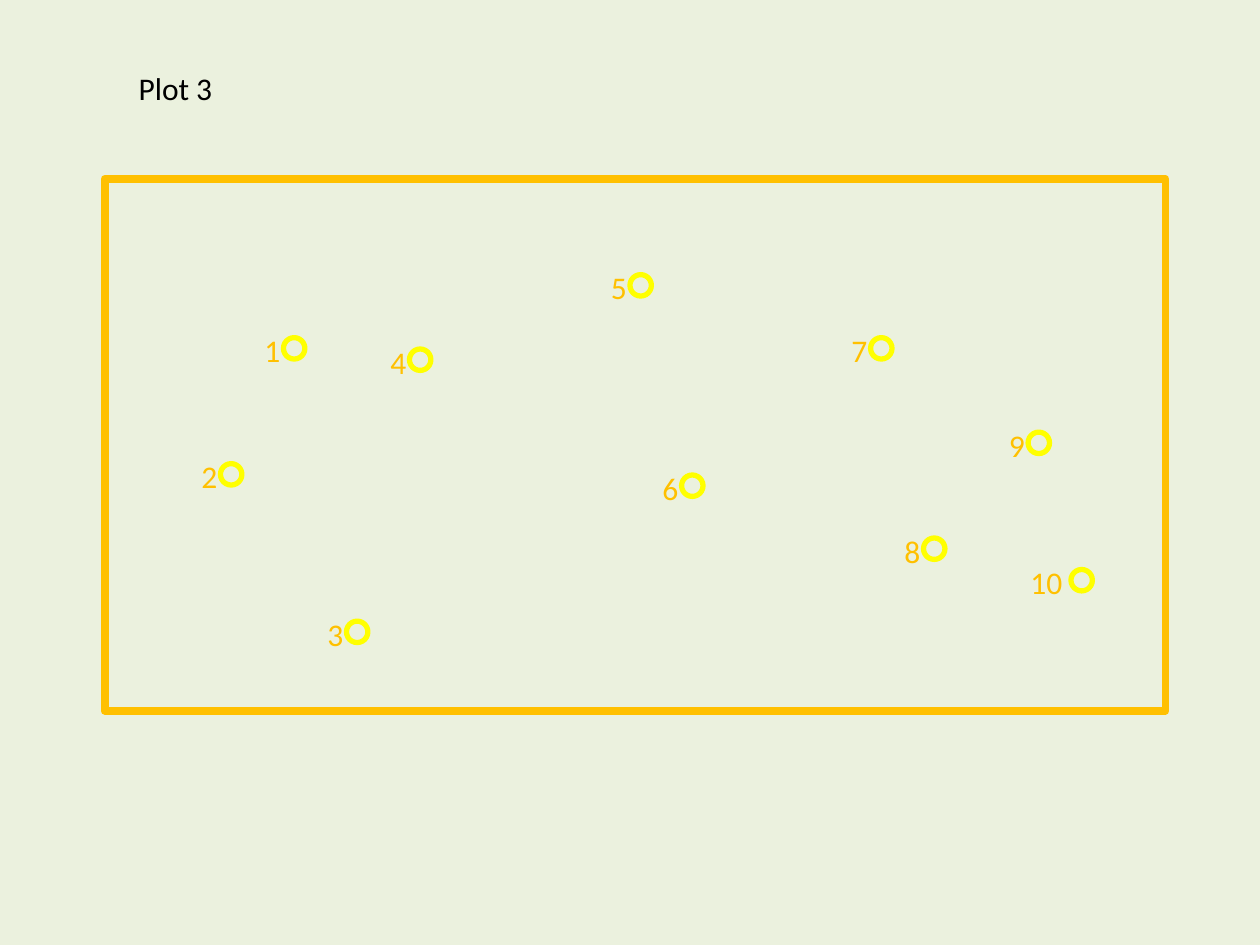
from dataclasses import dataclass

from pptx import Presentation
from pptx.dml.color import RGBColor
from pptx.enum import shapes, text
from pptx.util import Inches, Pt

COLORS = {"background": "EBF1DE", "plot": "FFC000", "tree": "FFFF00", "title": "000000"}
RING_SIZE = 0.17
LABEL_HEIGHT = 0.4
LABEL_RISE = 0.1  # label top above ring top


@dataclass
class Marker:
    number: int
    left: float
    top: float
    label_gap: float = 0.25  # label left edge to ring left edge
    label_width: float = 0.33


MARKERS = [
    Marker(1, 2.25, 2.68),
    Marker(2, 1.75, 3.68),
    Marker(3, 2.75, 4.93),
    Marker(4, 3.25, 2.77),
    Marker(5, 5, 2.18),
    Marker(6, 5.41, 3.77),
    Marker(7, 6.91, 2.68),
    Marker(8, 7.33, 4.27),
    Marker(9, 8.16, 3.43),
    Marker(10, 8.5, 4.52, label_gap=0.42, label_width=0.52),
]


def color(name: str) -> RGBColor:
    return RGBColor.from_string(COLORS[name])


def add_outline(parent, kind, box: tuple, color_name: str, weight: float) -> None:
    """Add an unfilled shape; box is left, top, width, height in inches."""
    shape = parent.add_shape(kind, *map(Inches, box))
    shape.shadow.inherit = False
    shape.fill.background()
    shape.line.color.rgb = color(color_name)
    shape.line.width = Pt(weight)


def set_text(shape, content: str, color_name: str) -> None:
    frame = shape.text_frame
    frame.text = content
    frame.word_wrap = False
    frame.auto_size = text.MSO_AUTO_SIZE.SHAPE_TO_FIT_TEXT
    frame.vertical_anchor = text.MSO_ANCHOR.TOP
    paragraph = frame.paragraphs[0]
    paragraph.alignment = text.PP_ALIGN.LEFT
    paragraph.font.name = "Calibri"
    paragraph.font.size = Pt(18)
    paragraph.font.color.rgb = color(color_name)


def add_marker(slide, marker: Marker) -> None:
    group = slide.shapes.add_group_shape()
    group.name = f"Marker {marker.number}"
    ring = (marker.left, marker.top, RING_SIZE, RING_SIZE)
    add_outline(group.shapes, shapes.MSO_SHAPE.OVAL, ring, "tree", 3)
    label = group.shapes.add_textbox(
        Inches(marker.left - marker.label_gap), Inches(marker.top - LABEL_RISE),
        Inches(marker.label_width), Inches(LABEL_HEIGHT))
    set_text(label, str(marker.number), "plot")


def main() -> None:
    presentation = Presentation()
    presentation.slide_width = Inches(10)
    presentation.slide_height = Inches(7.5)
    slide = presentation.slides.add_slide(presentation.slide_layouts.get_by_name("Title Only"))
    slide.background.fill.solid()
    slide.background.fill.fore_color.rgb = color("background")

    title = slide.shapes.title
    title.left, title.top = Inches(1), Inches(0.5)
    title.width, title.height = Inches(0.79), Inches(LABEL_HEIGHT)
    set_text(title, "Plot 3", "title")

    add_outline(slide.shapes, shapes.MSO_SHAPE.RECTANGLE, (0.83, 1.42, 8.42, 4.22), "plot", 4.5)
    for marker in MARKERS:
        add_marker(slide, marker)
    presentation.save("out.pptx")


if __name__ == "__main__":
    main()
